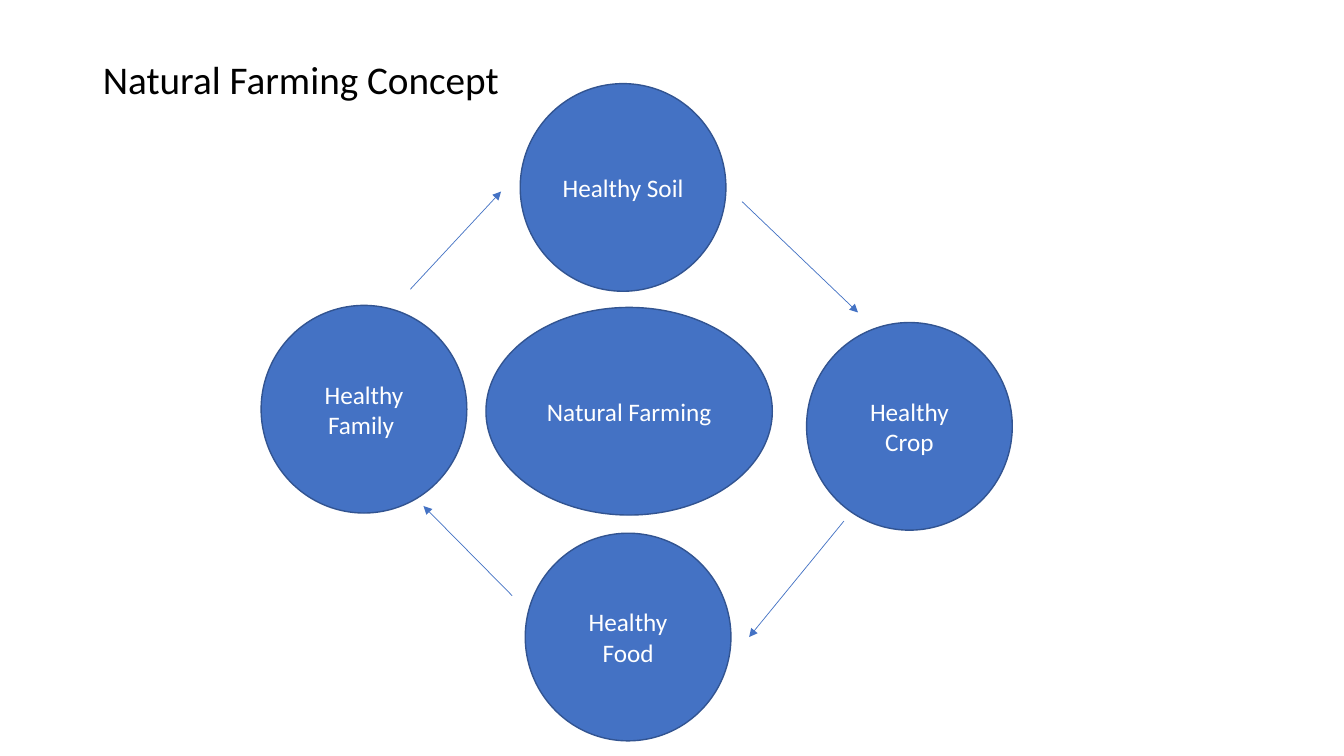
"""Build the Natural Farming Concept cycle slide."""
from lxml.etree import SubElement
from pptx import Presentation
from pptx.dml.color import RGBColor
from pptx.enum.shapes import MSO_CONNECTOR as Link, MSO_SHAPE as Shape
from pptx.enum.text import MSO_ANCHOR as Anchor, MSO_AUTO_SIZE as Fit, PP_ALIGN as Align
from pptx.oxml.ns import qn
from pptx.util import Pt

PX = 9144
HUES = {"fill": "4472C4", "edge": "325491", "white": "FFFFFF", "black": "000000"}


def hue(name):
    return RGBColor.from_string(HUES[name])


def write(shape, text, size=18, color="white", align=Align.CENTER, space=1.0):
    frame = shape.text_frame
    frame.word_wrap = True
    frame.auto_size = Fit.NONE
    frame.vertical_anchor = Anchor.MIDDLE
    para = frame.paragraphs[0]
    para.alignment = align
    para.line_spacing = space
    run = para.add_run()
    run.text = text
    run.font.name = "Calibri"
    run.font.size = Pt(size)
    run.font.color.rgb = hue(color)


deck = Presentation()
deck.slide_width = 1333 * PX
deck.slide_height = 750 * PX
slide = deck.slides.add_slide(deck.slide_layouts[5])

title = slide.shapes.title
title.left, title.top, title.width, title.height = [n * PX for n in (92, 40, 1150, 145)]
write(title, "Natural Farming Concept", size=28, color="black", align=Align.LEFT, space=0.9)
title.text_frame.margin_bottom = 67 * PX

arrows = [
    (736, 200, 851, 310),
    (837, 517, 743, 632),
    (508, 591, 420, 502),
    (407, 287, 497, 190),
]
for ends in arrows:
    arrow = slide.shapes.add_connector(Link.STRAIGHT, *[n * PX for n in ends])
    arrow.line.color.rgb = hue("fill")
    arrow.line.width = Pt(0.5)
    SubElement(arrow.line._get_or_add_ln(), qn("a:tailEnd"), type="triangle")
    SubElement(arrow._element.spPr, qn("a:effectLst"))

ovals = [
    ("Natural Farming", 482, 305, 284),
    ("Healthy Crop", 800, 320, 204),
    ("Healthy Food", 521, 529, 204),
    ("Healthy Soil", 516, 83, 204),
    ("Healthy Family ", 259, 303, 204),
]
for text, left, top, width in ovals:
    oval = slide.shapes.add_shape(Shape.OVAL, left * PX, top * PX, width * PX, 206 * PX)
    oval.shadow.inherit = False
    oval.fill.solid()
    oval.fill.fore_color.rgb = hue("fill")
    oval.line.color.rgb = hue("edge")
    oval.line.width = Pt(1)
    write(oval, text)

deck.save("out.pptx")
